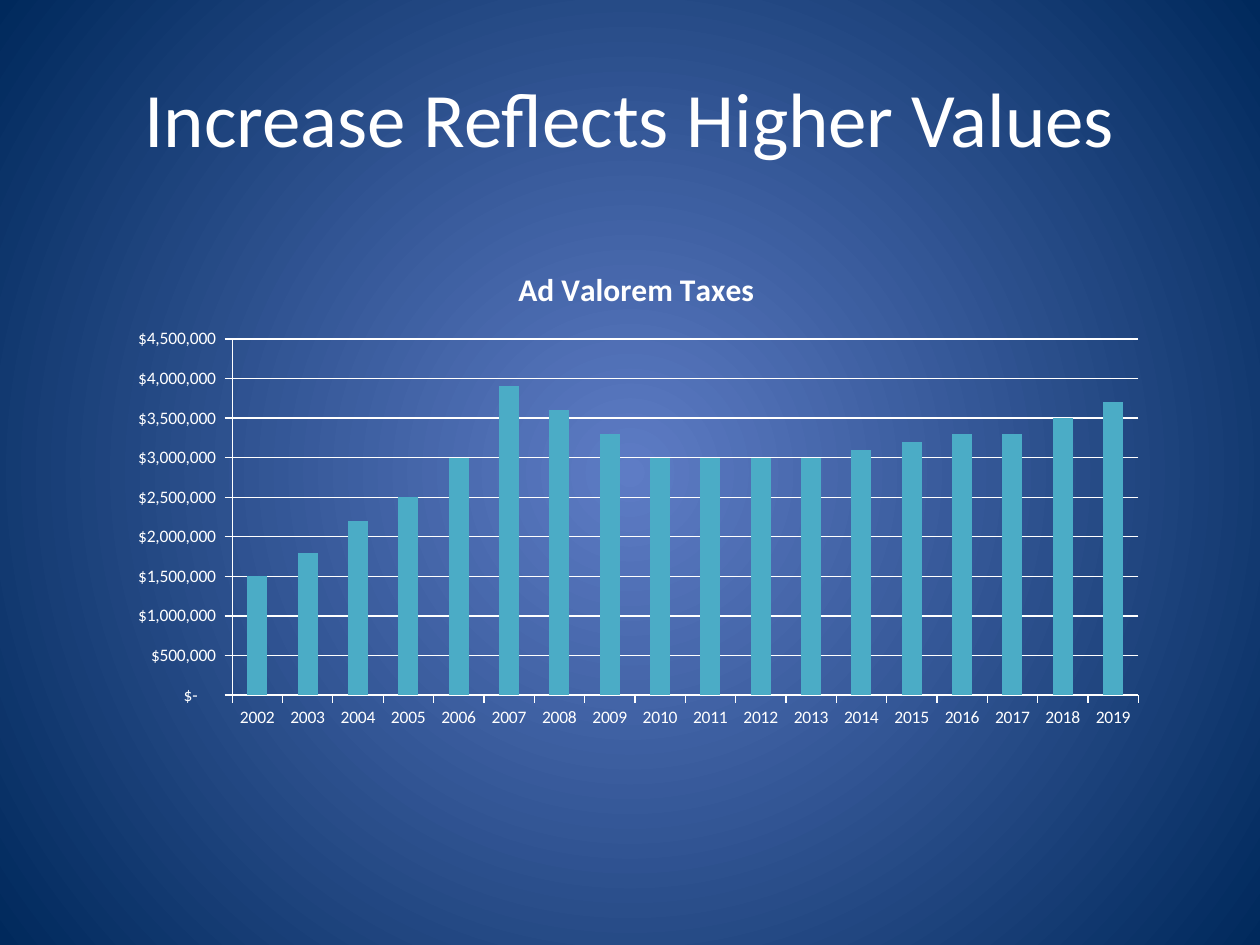
from dataclasses import dataclass

from lxml import etree
from pptx import Presentation
from pptx.chart.data import CategoryChartData
from pptx.dml.color import RGBColor
from pptx.enum.chart import XL_CHART_TYPE, XL_TICK_LABEL_POSITION, XL_TICK_MARK
from pptx.enum.text import MSO_ANCHOR, PP_ALIGN
from pptx.oxml.ns import qn
from pptx.util import Inches, Pt

COLUMN = XL_CHART_TYPE.COLUMN_CLUSTERED
OUT, NONE = XL_TICK_MARK.OUTSIDE, XL_TICK_MARK.NONE
LOW = XL_TICK_LABEL_POSITION.LOW
MIDDLE, CENTER = MSO_ANCHOR.MIDDLE, PP_ALIGN.CENTER
TITLE_ONLY = 5
MONEY = r'_("$"* #,##0_);_("$"* \(#,##0\);_("$"* "-"??_);_(@_)'

YEARS = [str(year) for year in range(2002, 2020)]
TAXES = [1.5, 1.8, 2.2, 2.5, 3.0, 3.9, 3.6, 3.3, 3.0,
         3.0, 3.0, 3.0, 3.1, 3.2, 3.3, 3.3, 3.5, 3.7]  # millions


@dataclass
class Theme:
    font: str = "Calibri"
    text: str = "FFFFFF"
    bar: str = "4BACC6"
    glow: str = "5E7CC5"
    edge: str = "00295C"
    head: int = 44
    name: int = 18
    label: int = 10


def assign(item, values):
    for key, value in values.items():
        setattr(item, key, value)


class Deck:
    def __init__(self, theme, width, height):
        self.theme = theme
        self.file = Presentation()
        self.size = (Inches(width), Inches(height))
        assign(self.file, dict(zip(("slide_width", "slide_height"), self.size)))
        self.slide = self.file.slides.add_slide(
            self.file.slide_layouts[TITLE_ONLY])

    def place(self, *shares):
        """Turn shares of the slide into left, top, width and height."""
        return [round(share * self.size[i % 2])
                for i, share in enumerate(shares)]

    def style(self, font, size, bold=False):
        assign(font, {"name": self.theme.font, "size": Pt(size), "bold": bold})
        font.color.rgb = RGBColor.from_string(self.theme.text)

    def back(self):
        fill = self.slide.background.fill
        fill.gradient()
        colors = (self.theme.glow, self.theme.edge)
        for stop, color in zip(fill.gradient_stops, colors):
            stop.color.rgb = RGBColor.from_string(color)
        for stop, share in zip(fill.gradient_stops, (0, 1)):
            stop.position = share
        # Swap the linear run for a circle around the centre
        grad = self.slide.background._cSld.find(".//" + qn("a:gradFill"))
        grad.remove(grad.find(qn("a:lin")))
        ring = etree.SubElement(grad, qn("a:path"), {"path": "circle"})
        etree.SubElement(ring, qn("a:fillToRect"),
                         {side: "50000" for side in "ltrb"})

    def title(self, text, *shares):
        shape = self.slide.shapes.title
        spots = ("left", "top", "width", "height")
        assign(shape, dict(zip(spots, self.place(*shares))))
        frame = shape.text_frame
        assign(frame, {"text": text, "vertical_anchor": MIDDLE,
                       "word_wrap": True})
        line = frame.paragraphs[0]
        line.alignment = CENTER
        self.style(line.runs[0].font, self.theme.head)

    def axis(self, axis, grid):
        assign(axis, {"major_tick_mark": OUT, "minor_tick_mark": NONE,
                      "tick_label_position": LOW, "has_major_gridlines": grid})
        lines = [axis.format.line]
        if grid:
            lines.append(axis.major_gridlines.format.line)
        for line in lines:
            line.color.rgb = RGBColor.from_string(self.theme.text)
            line.width = Pt(0.75)
        self.style(axis.tick_labels.font, self.theme.label)

    def chart(self, name, cats, values, *shares):
        data = CategoryChartData(number_format=MONEY)
        data.categories = cats
        data.add_series(name, values)
        chart = self.slide.shapes.add_chart(
            COLUMN, *self.place(*shares), data).chart
        self.style(chart.font, self.theme.label)
        assign(chart, {"has_legend": False, "has_title": True})

        # Chart title
        frame = chart.chart_title.text_frame
        frame.text = name
        self.style(frame.paragraphs[0].runs[0].font, self.theme.name, True)
        chart.chart_title.include_in_layout = False

        # Axes
        self.axis(chart.category_axis, False)
        self.axis(chart.value_axis, True)
        assign(chart.value_axis, {"minimum_scale": 0, "maximum_scale": 4500000,
                                  "major_unit": 500000})
        assign(chart.value_axis.tick_labels,
               {"number_format": MONEY, "number_format_is_linked": False})

        # Bars
        plot = chart.plots[0]
        assign(plot, {"gap_width": 150, "vary_by_categories": False})
        fill = plot.series[0].format.fill
        fill.solid()
        fill.fore_color.rgb = RGBColor.from_string(self.theme.bar)


def main():
    deck = Deck(Theme(), 10, 7.5)
    deck.back()
    deck.title("Increase Reflects Higher Values", 0.05, 0.04, 0.9, 1 / 6)
    taxes = [round(value * 1000000) for value in TAXES]
    deck.chart("Ad Valorem Taxes", YEARS, taxes,
               0.09, 0.26, 0.83, 0.52)
    deck.file.save("out.pptx")


if __name__ == "__main__":
    main()
